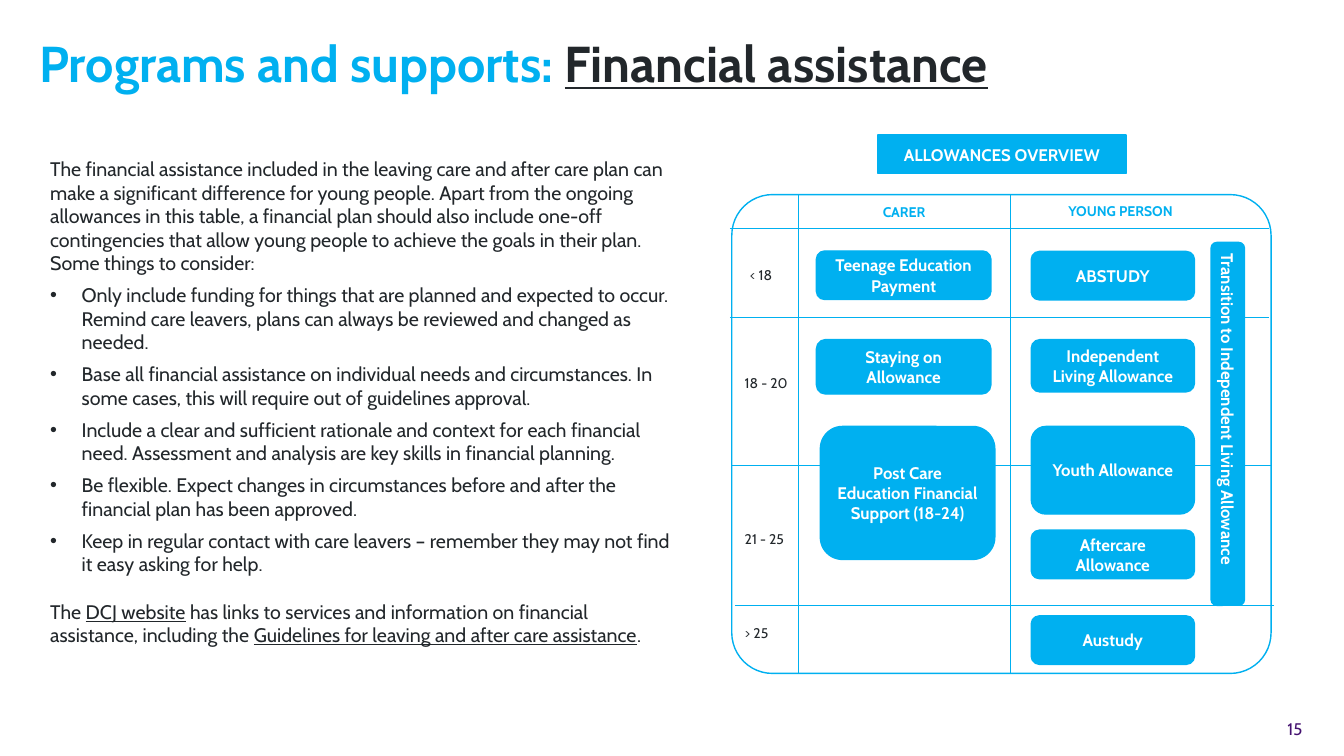
from dataclasses import dataclass

from lxml.etree import SubElement
from pptx import Presentation
from pptx.dml.color import RGBColor
from pptx.enum.shapes import MSO_CONNECTOR, MSO_SHAPE
from pptx.enum.text import MSO_ANCHOR, MSO_AUTO_SIZE, PP_ALIGN
from pptx.oxml.ns import qn
from pptx.util import Pt


@dataclass(frozen=True)
class Theme:
    font: str = "Cabin"
    blue: RGBColor = RGBColor(0x00, 0xB0, 0xF0)
    ink: RGBColor = RGBColor(0x22, 0x27, 0x2B)
    white: RGBColor = RGBColor(0xFF, 0xFF, 0xFF)
    purple: RGBColor = RGBColor(0x44, 0x11, 0x70)
    title_size: int = 36
    body_size: int = 14
    chip_size: int = 12
    label_size: int = 10


THEME = Theme()

INTRO = (
    "The financial assistance included in the leaving care and after care plan can make a "
    "significant difference for young people. Apart from the ongoing allowances in this table, "
    "a financial plan should also include one-off contingencies that allow young people to "
    "achieve the goals in their plan. Some things to consider:"
)
CONSIDERATIONS = [
    "Only include funding for things that are planned and expected to occur. Remind care "
    "leavers, plans can always be reviewed and changed as needed.",
    "Base all financial assistance on individual needs and circumstances. In some cases, this "
    "will require out of guidelines approval.",
    "Include a clear and sufficient rationale and context for each financial need. Assessment "
    "and analysis are key skills in financial planning.",
    "Be flexible. Expect changes in circumstances before and after the financial plan has been "
    "approved.",
    "Keep in regular contact with care leavers – remember they may not find it easy asking for "
    "help.",
]
# Each span: text, underlined
CLOSING = [
    ("The ", False),
    ("DCJ website", True),
    (" has links to services and information on financial assistance, including the ", False),
    ("Guidelines for leaving and after care assistance", True),
    (".", False),
]

FRAME = (522.7, 139, 385.2, 342)
COLUMN_LINES = [570.2, 721.4]
# Each row line: left, top
ROW_LINES = [(521.3, 163.4), (521.3, 226.8), (522.7, 332.6), (524.9, 432.7)]
# Each label: text, left, top, width
HEADINGS = [("CARER", 623.5, 141.8, 60.5), ("YOUNG PERSON", 756, 141.1, 105.8)]
AGES = [
    ("< 18", 528.5, 186.5, 33.1),
    ("18 - 20", 524.9, 264.2, 52.6),
    ("21 - 25", 524.9, 375.1, 52.6),
    ("> 25", 524.9, 442.8, 52.6),
]
# Each allowance: text, left, top, width, height
ALLOWANCES = [
    ("Teenage Education Payment", 583.2, 179.3, 124.6, 34.6),
    ("Staying on Allowance", 583.2, 242.6, 124.6, 38.9),
    ("Post Care Education Financial Support (18-24)", 586, 304.6, 124.6, 95),
    ("ABSTUDY", 736.6, 179.6, 116.6, 34.6),
    ("Independent Living Allowance", 736.6, 242.6, 116.6, 37.4),
    ("Youth Allowance", 736.6, 304.6, 116.6, 62.6),
    ("Aftercare Allowance", 736.6, 378.7, 116.6, 34.6),
    ("Austudy", 736.6, 439.9, 116.6, 34.6),
]


def format_runs(para, size, color, bold=False):
    for span in para.runs:
        span.font.name = THEME.font
        span.font.size = Pt(size)
        span.font.color.rgb = color
        span.font.bold = bold


def add_spans(para, spans):
    for text, underlined in spans:
        span = para.add_run()
        span.text = text
        span.font.underline = underlined


def set_bullet(para):
    properties = para._p.get_or_add_pPr()
    properties.set("marL", str(Pt(22.5)))
    properties.set("indent", str(-Pt(22.5)))
    SubElement(properties, qn("a:buFont")).set("typeface", "Arial")
    SubElement(properties, qn("a:buChar")).set("char", "•")


def add_text_box(page, left, top, width, height):
    box = page.shapes.add_textbox(Pt(left), Pt(top), Pt(width), Pt(height))
    box.text_frame.word_wrap = True
    return box


def add_label(page, text, left, top, width, color, bold=False):
    box = add_text_box(page, left, top, width, 19.4)
    box.text_frame.text = text
    format_runs(box.text_frame.paragraphs[0], THEME.label_size, color, bold)


def add_line(page, start_x, start_y, end_x, end_y):
    line = page.shapes.add_connector(
        MSO_CONNECTOR.STRAIGHT, Pt(start_x), Pt(start_y), Pt(end_x), Pt(end_y)
    )
    line.line.color.rgb = THEME.blue
    line.line.width = Pt(0.5)
    SubElement(line._element.spPr, qn("a:effectLst"))


def add_outlined(page, kind, left, top, width, height):
    shape = page.shapes.add_shape(kind, Pt(left), Pt(top), Pt(width), Pt(height))
    shape.shadow.inherit = False
    shape.line.color.rgb = THEME.blue
    shape.line.width = Pt(1)
    return shape


def add_chip(page, text, left, top, width, height,
             kind=MSO_SHAPE.ROUNDED_RECTANGLE, align=PP_ALIGN.CENTER):
    """Add a filled blue shape with bold white text."""
    chip = add_outlined(page, kind, left, top, width, height)
    chip.fill.solid()
    chip.fill.fore_color.rgb = THEME.blue
    frame = chip.text_frame
    frame.word_wrap = True
    frame.vertical_anchor = MSO_ANCHOR.MIDDLE
    frame.text = text
    frame.paragraphs[0].alignment = align
    format_runs(frame.paragraphs[0], THEME.chip_size, THEME.white, True)
    return chip


def clear_margins(frame):
    frame.margin_left = frame.margin_top = frame.margin_right = frame.margin_bottom = 0


def add_title(page):
    title = page.shapes.title
    title.left, title.top, title.width, title.height = Pt(28.1), Pt(28.1), Pt(765.4), Pt(79.2)
    frame = title.text_frame
    clear_margins(frame)
    frame.auto_size = MSO_AUTO_SIZE.NONE
    frame.vertical_anchor = MSO_ANCHOR.TOP
    para = frame.paragraphs[0]
    para.alignment = PP_ALIGN.LEFT
    para.line_spacing = 0.9
    add_spans(para, [("Programs and supports: ", False), ("Financial assistance", True)])
    format_runs(para, THEME.title_size, THEME.blue, True)
    para.runs[1].font.color.rgb = THEME.ink


def add_body(page):
    frame = add_text_box(page, 28.8, 108.7, 458.6, 411.1).text_frame
    frame.text = INTRO
    for text in CONSIDERATIONS:
        para = frame.add_paragraph()
        para.text = text
        para.space_before = Pt(6)
        set_bullet(para)
    closing = frame.add_paragraph()
    closing.space_before = Pt(17)
    add_spans(closing, CLOSING)
    for para in frame.paragraphs:
        format_runs(para, THEME.body_size, THEME.ink)


def add_allowances_overview(page):
    left, top, width, height = FRAME
    for line_left, line_top in ROW_LINES:
        add_line(page, line_left, line_top, line_left + width, line_top)
    for column in COLUMN_LINES:
        add_line(page, column, top, column, top + height)
    border = add_outlined(page, MSO_SHAPE.ROUNDED_RECTANGLE, *FRAME)
    border.fill.background()
    border.adjustments[0] = 0.085

    add_chip(page, "ALLOWANCES OVERVIEW", 627.1, 96.5, 177.1, 27.4, MSO_SHAPE.RECTANGLE)
    for heading in HEADINGS:
        add_label(page, *heading, THEME.blue, True)
    for age in AGES:
        add_label(page, *age, THEME.ink)
    for allowance in ALLOWANCES:
        add_chip(page, *allowance)
    transition = add_chip(page, "Transition to Independent Living Allowance",
                          747.4, 290.9, 259.2, 23.8, align=PP_ALIGN.LEFT)
    transition.rotation = 90


def add_page_number(page):
    frame = add_text_box(page, 891.4, 513.4, 38.9, 14.4).text_frame
    clear_margins(frame)
    frame.text = "15"
    frame.paragraphs[0].alignment = PP_ALIGN.RIGHT
    format_runs(frame.paragraphs[0], THEME.chip_size, THEME.purple)


def main():
    deck = Presentation()
    deck.slide_width, deck.slide_height = Pt(960), Pt(540)
    page = deck.slides.add_slide(deck.slide_layouts.get_by_name("Title Only"))
    add_title(page)
    add_body(page)
    add_allowances_overview(page)
    add_page_number(page)
    deck.save("out.pptx")


if __name__ == "__main__":
    main()
